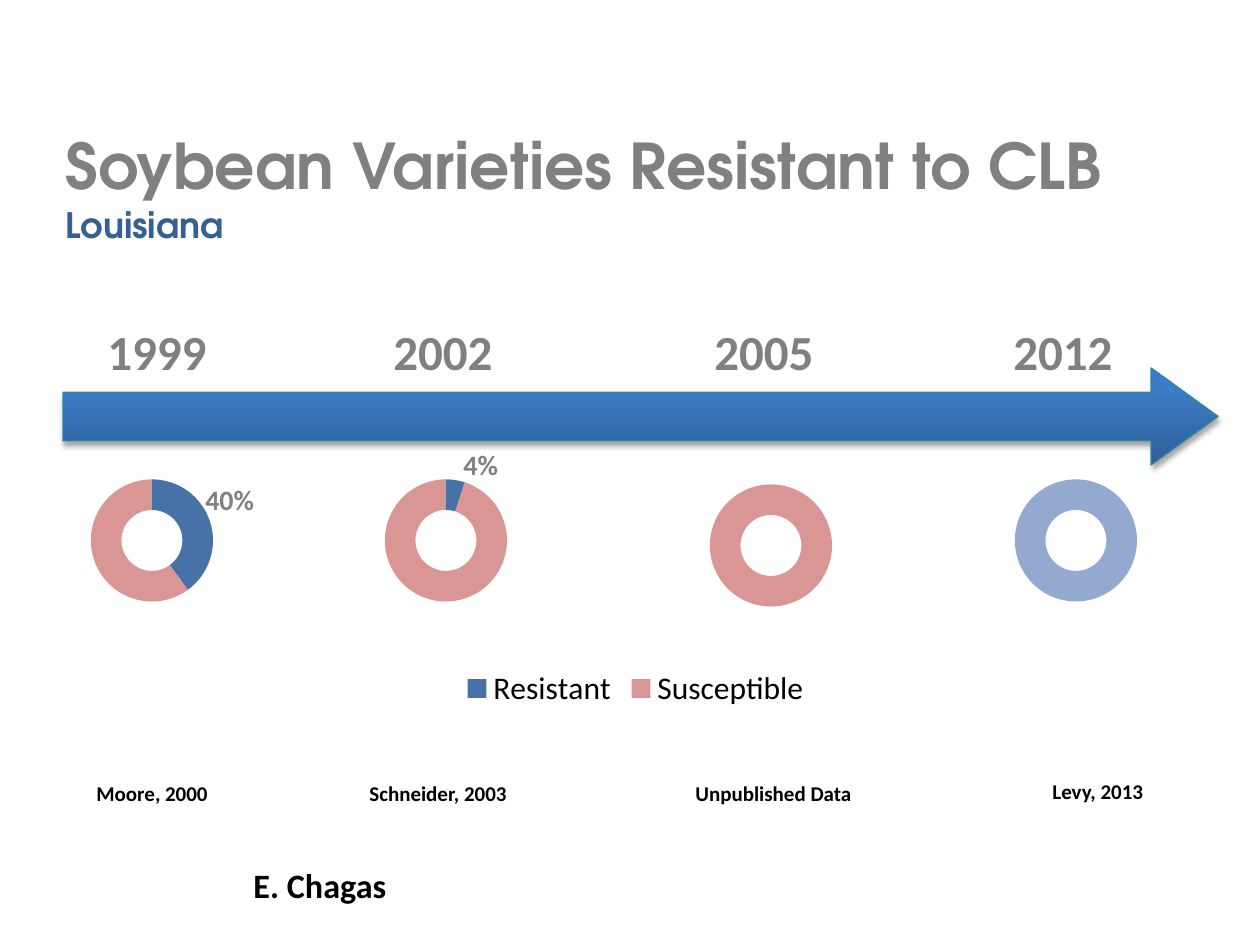
"""Build the timeline slide of soybean varieties resistant to CLB."""
from dataclasses import dataclass
from typing import Optional

from lxml.etree import SubElement
from pptx import Presentation
from pptx.chart.data import CategoryChartData
from pptx.dml.color import RGBColor
from pptx.enum.chart import XL_CHART_TYPE, XL_LEGEND_POSITION
from pptx.enum.shapes import MSO_SHAPE
from pptx.enum.text import MSO_ANCHOR, PP_ALIGN
from pptx.oxml import parse_xml
from pptx.oxml.ns import nsdecls, qn
from pptx.util import Emu, Pt

EMU_PER_PIXEL = 914400 / 126
BLUE, PINK, PALE_BLUE = "4672A8", "D99694", "93A9CF"
GRAY, BLACK, WHITE, NAVY = "808080", "000000", "FFFFFF", "376092"
HEADING_FONT, BODY_FONT = "TeX Gyre Adventor", "Calibri"


@dataclass(frozen=True)
class Box:
    """A rectangle in px."""
    left: int
    top: int
    width: int
    height: int

    def emu(self) -> tuple:
        """Return the four lengths in EMU."""
        return tuple(px(value) for value in (self.left, self.top, self.width, self.height))


@dataclass(frozen=True)
class Label:
    """A one-line text with its look and tab stops in px."""
    text: str
    box: Box
    size: float
    color: str = BLACK
    font: str = BODY_FONT
    wrap: bool = False
    anchor: MSO_ANCHOR = MSO_ANCHOR.TOP
    align: PP_ALIGN = PP_ALIGN.LEFT
    tabs: tuple = ()


@dataclass(frozen=True)
class Survey:
    """One year on the timeline with its result and its reference."""
    year: str
    year_offset: int
    chart_box: Box
    resistant: int
    reference: str
    reference_box: Box
    rest_color: str = PINK
    share: Optional[Label] = None


SURVEYS = (
    Survey("1999", 0, Box(53, 462, 198, 157), 40, "Moore, 2000", Box(84, 774, 139, 38),
           share=Label("40%", Box(193, 476, 74, 47), 16, GRAY)),
    Survey("2002", 286, Box(347, 462, 198, 157), 5, "Schneider, 2003", Box(357, 774, 165, 38),
           share=Label("4%", Box(451, 441, 60, 47), 16, GRAY)),
    Survey("2005", 607, Box(672, 467, 198, 157), 0, "Unpublished Data", Box(683, 774, 184, 38)),
    Survey("2012", 906, Box(977, 462, 198, 157), 0, "Levy, 2013", Box(1040, 772, 117, 38),
           rest_color=PALE_BLUE),
)
HEADINGS = (
    Label("Soybean Varieties Resistant to CLB", Box(53, 116, 1134, 97), 36, GRAY,
          HEADING_FONT, True, MSO_ANCHOR.MIDDLE),
    Label("Louisiana", Box(53, 197, 252, 55), 20, NAVY, HEADING_FONT, True, MSO_ANCHOR.MIDDLE),
)
YEARS = Label("\t".join(survey.year for survey in SURVEYS), Box(95, 315, 1082, 72), 28, GRAY,
              wrap=True, tabs=tuple(survey.year_offset for survey in SURVEYS[1:]))
AUTHOR = Label("E. Chagas", Box(0, 836, 640, 98), 19.5, wrap=True,
               anchor=MSO_ANCHOR.MIDDLE, align=PP_ALIGN.CENTER)


def px(value: int) -> Emu:
    """Turn px into EMU."""
    return Emu(round(value * EMU_PER_PIXEL))


def rgb(color: str) -> RGBColor:
    """Turn a hex string into a colour."""
    return RGBColor.from_string(color)


def set_attributes(target, values: dict) -> None:
    """Set every named value on the target."""
    for name, value in values.items():
        setattr(target, name, value)


def add_label(slide, label: Label) -> None:
    """Draw a label as a text box."""
    frame = slide.shapes.add_textbox(*label.box.emu()).text_frame
    set_attributes(frame, {"word_wrap": label.wrap, "vertical_anchor": label.anchor})
    paragraph = frame.paragraphs[0]
    set_attributes(paragraph, {"text": label.text, "alignment": label.align})
    if label.tabs:
        tab_list = SubElement(paragraph._p.get_or_add_pPr(), qn("a:tabLst"))
        for position in label.tabs:
            SubElement(tab_list, qn("a:tab"), pos=str(px(position)), algn="l")
    font = paragraph.runs[0].font
    set_attributes(font, {"name": label.font, "size": Pt(label.size), "bold": True})
    font.color.rgb = rgb(label.color)


def add_doughnut(slide, box: Box, categories: tuple, values: tuple, colors: tuple):
    """Draw a doughnut chart without title or legend and return it."""
    data = CategoryChartData()
    data.categories = categories
    data.add_series("Series 1", values)
    chart = slide.shapes.add_chart(XL_CHART_TYPE.DOUGHNUT, *box.emu(), data).chart
    set_attributes(chart, {"has_title": False, "has_legend": False})
    set_attributes(chart.font, {"name": BODY_FONT, "size": Pt(18)})
    chart.font.color.rgb = rgb(BLACK)
    plot = chart.plots[0]
    plot.vary_by_categories = True
    for index, color in enumerate(colors):
        point_format = plot.series[0].points[index].format
        point_format.fill.solid()
        point_format.fill.fore_color.rgb = rgb(color)
        point_format.line.fill.background()
    return chart


def set_plot_area(chart, values: dict) -> None:
    """Place the inner plot area by fractions of the chart."""
    plot_area = chart.plots[0]._element.getparent()
    for old_layout in plot_area.findall(qn("c:layout")):
        plot_area.remove(old_layout)
    layout = parse_xml(f"<c:layout {nsdecls('c')}><c:manualLayout/></c:layout>")
    plot_area.insert(0, layout)
    settings = {"layoutTarget": "inner", "xMode": "edge", "yMode": "edge", **values}
    for name, value in settings.items():
        SubElement(layout[0], qn(f"c:{name}")).set("val", str(value))


def add_legend(slide) -> None:
    """Draw the shared legend and cover its small plot."""
    chart = add_doughnut(slide, Box(54, 630, 1163, 84), ("Resistant", "Susceptible"),
                         (40, 60), (BLUE, PINK))
    chart.has_legend = True
    set_attributes(chart.legend, {"position": XL_LEGEND_POSITION.BOTTOM,
                                  "include_in_layout": False})
    set_plot_area(chart, {"x": 0.97, "y": 0.33, "w": 0.03, "h": 0.25})
    cover = slide.shapes.add_shape(MSO_SHAPE.RECTANGLE, *Box(1129, 640, 95, 57).emu())
    cover.shadow.inherit = False
    cover.fill.solid()
    cover.fill.fore_color.rgb = rgb(WHITE)
    cover.line.color.rgb = rgb(WHITE)
    cover.line.width = Pt(2)


def add_timeline(slide) -> None:
    """Draw the gradient arrow with its soft shadow."""
    arrow = slide.shapes.add_shape(MSO_SHAPE.RIGHT_ARROW, *Box(63, 368, 1155, 97).emu())
    arrow.adjustments[0], arrow.adjustments[1] = 0.5, 0.69
    arrow.line.color.rgb = rgb("31859C")
    arrow.line.width = Pt(0.75)
    stops = "".join(f'<a:gs pos="{position}000"><a:srgbClr val="{color}"/></a:gs>'
                    for position, color in ((0, "2F5F99"), (80, "3D7CC7"), (100, "3A7CCB")))
    gradient = parse_xml(f'<a:gradFill {nsdecls("a")} rotWithShape="1"><a:gsLst>{stops}</a:gsLst>'
                         '<a:lin ang="16200000" scaled="0"/></a:gradFill>')
    shadow = parse_xml(f'<a:effectLst {nsdecls("a")}><a:outerShdw blurRad="{Pt(3.1)}" '
                       f'dist="{Pt(1.8)}" dir="5400000" rotWithShape="0"><a:srgbClr val="{BLACK}">'
                       '<a:alpha val="35000"/></a:srgbClr></a:outerShdw></a:effectLst>')
    properties = arrow._element.spPr
    properties.find(qn("a:prstGeom")).addnext(gradient)
    properties.append(shadow)


def add_survey(slide, survey: Survey) -> None:
    """Draw the chart, share and reference of one year."""
    add_doughnut(slide, survey.chart_box, ("1", "2"),
                 (survey.resistant, 100 - survey.resistant), (BLUE, survey.rest_color))
    add_label(slide, Label(survey.reference, survey.reference_box, 12))
    if survey.share:
        add_label(slide, survey.share)


def main() -> None:
    """Build and save the slide."""
    presentation = Presentation()
    set_attributes(presentation, {"slide_width": px(1260), "slide_height": px(945)})
    slide = presentation.slides.add_slide(presentation.slide_layouts[6])
    for heading in HEADINGS:
        add_label(slide, heading)
    add_timeline(slide)
    add_label(slide, YEARS)
    for survey in SURVEYS:
        add_survey(slide, survey)
    add_legend(slide)
    add_label(slide, AUTHOR)
    presentation.save("out.pptx")


if __name__ == "__main__":
    main()
